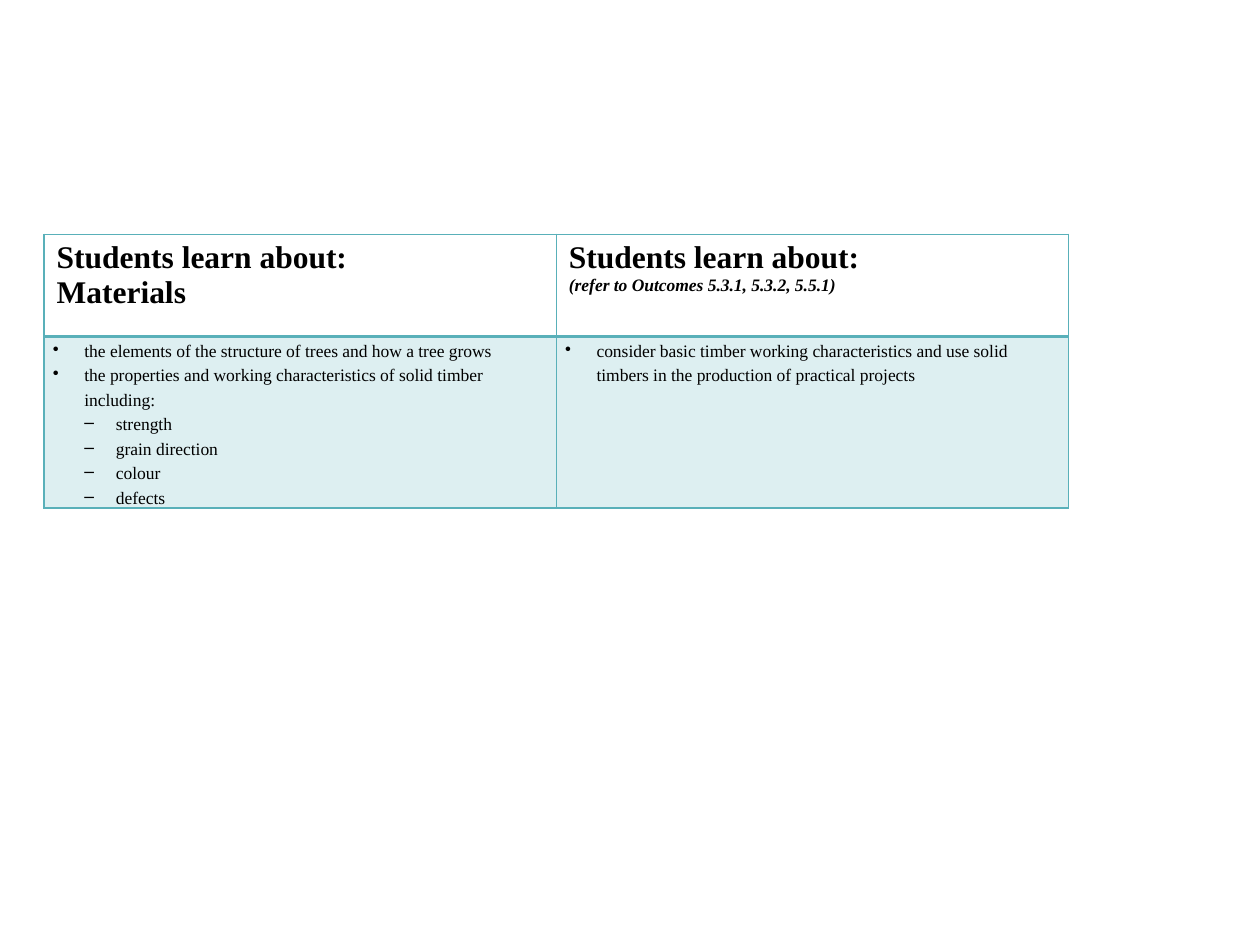
from dataclasses import dataclass

from lxml import etree
from pptx import Presentation
from pptx import util as u
from pptx.dml.color import RGBColor
from pptx.oxml import ns


@dataclass(frozen=True)
class Theme:
    font: str = "Times New Roman"
    text: str = "000000"
    accent: str = "59B0B9"
    body_alpha: int = 20
    heading_size: int = 18
    body_size: int = 10
    body_leading: int = 14


THEME = Theme()
BULLET, DASH = "•", "–"
INDENT = {BULLET: 0.25, DASH: 0.5}

HEADINGS = [
    [("Students learn about:", THEME.heading_size, False),
     ("Materials", THEME.heading_size, False)],
    [("Students learn about:", THEME.heading_size, False),
     ("(refer to Outcomes 5.3.1, 5.3.2, 5.5.1)", THEME.body_size, True)],
]
TOPICS = [
    [(BULLET, "the elements of the structure of trees and how a tree grows"),
     (BULLET, "the properties and working characteristics of solid timber including:"),
     (DASH, "strength"),
     (DASH, "grain direction"),
     (DASH, "colour"),
     (DASH, "defects")],
    [(BULLET, "consider basic timber working characteristics and use solid "
              "timbers in the production of practical projects")],
]


def add_xml(parent, tag, **attrs):
    return etree.SubElement(parent, ns.qn(tag), attrs)


def set_borders(cell, bottom=1, top=1):
    """Draw all four cell borders; widths are in points."""
    tc_pr = cell._tc.get_or_add_tcPr()
    for side, width in (("L", 1), ("R", 1), ("T", top), ("B", bottom)):
        ln = add_xml(tc_pr, f"a:ln{side}", w=str(u.Pt(width)))
        add_xml(add_xml(ln, "a:solidFill"), "a:srgbClr", val=THEME.accent)


def tint(cell):
    """Fill the cell with the see-through accent colour."""
    cell.fill.solid()
    cell.fill.fore_color.rgb = RGBColor.from_string(THEME.accent)
    color = cell._tc.tcPr.find(f".//{ns.qn('a:solidFill')}[last()]")
    color = cell._tc.tcPr.find(ns.qn("a:solidFill"))[0]
    add_xml(color, "a:alpha", val=str(THEME.body_alpha * 1000))


def add_paragraph(tf, index, content):
    p = tf.paragraphs[0] if index == 0 else tf.add_paragraph()
    p.text = content
    return p


def format_run(p, size, bold=False, italic=False):
    font = p.runs[0].font
    font.name, font.size = THEME.font, u.Pt(size)
    font.bold, font.italic = bold, italic
    font.color.rgb = RGBColor.from_string(THEME.text)


def set_bullet(p, char):
    p_pr = p._p.get_or_add_pPr()
    left = u.Inches(INDENT[char])
    p_pr.set("marL", str(left))
    p_pr.set("indent", str(-u.Inches(0.25)))
    add_xml(p_pr, "a:buChar", char=char)
    add_xml(add_xml(p_pr, "a:tabLst"), "a:tab", pos=str(left), algn="l")
    p.line_spacing = u.Pt(THEME.body_leading)


def fill_heading(cell, lines):
    set_borders(cell, bottom=2)
    cell.fill.background()
    for i, (content, size, italic) in enumerate(lines):
        p = add_paragraph(cell.text_frame, i, content)
        format_run(p, size, bold=True, italic=italic)


def fill_topics(cell, items):
    set_borders(cell, top=2)
    tint(cell)
    cell.margin_left = cell.margin_right = u.Inches(0.07)
    cell.margin_top = cell.margin_bottom = 0
    for i, (char, content) in enumerate(items):
        p = add_paragraph(cell.text_frame, i, content)
        set_bullet(p, char)
        format_run(p, THEME.body_size)


def add_syllabus_table(slide):
    frame = slide.shapes.add_table(2, 2, u.Inches(0.35), u.Inches(1.86),
                                   u.Inches(8.13), u.Inches(2.17))
    table = frame.table
    table.first_row = table.horz_banding = False
    for row, height in zip(table.rows, (0.81, 1.36)):
        row.height = u.Inches(height)
    for col, (heading, topics) in enumerate(zip(HEADINGS, TOPICS)):
        fill_heading(table.cell(0, col), heading)
        fill_topics(table.cell(1, col), topics)


def main():
    prs = Presentation()
    prs.slide_width, prs.slide_height = u.Inches(10), u.Inches(7.5)
    add_syllabus_table(prs.slides.add_slide(prs.slide_layouts[6]))
    prs.save("out.pptx")


if __name__ == "__main__":
    main()
